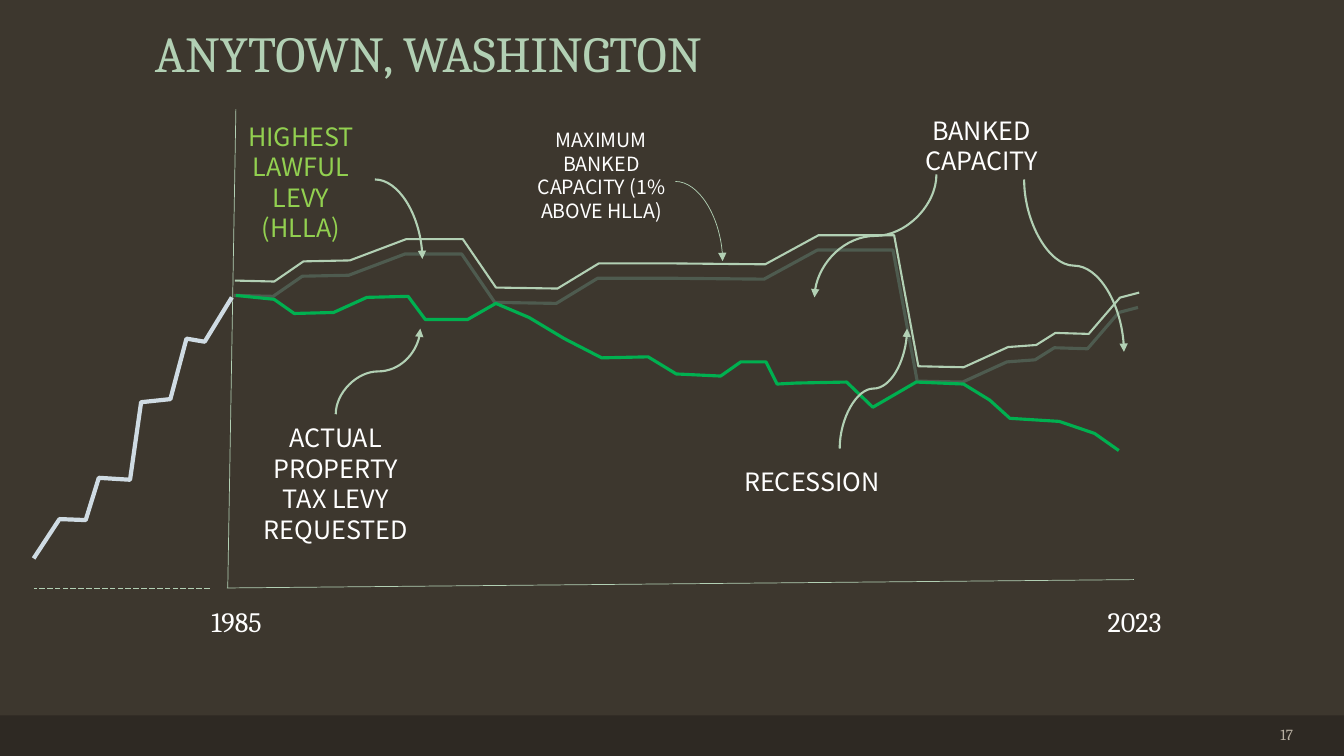
from lxml.etree import SubElement
from pptx import Presentation
from pptx.dml.color import RGBColor
from pptx.enum.dml import MSO_LINE
from pptx.enum.shapes import MSO_CONNECTOR, MSO_SHAPE
from pptx.enum.text import MSO_ANCHOR, PP_ALIGN
from pptx.oxml.ns import qn
from pptx.util import Pt

SAGE, WHITE = "B2D0B4", "FFFFFF"
SERIF, SANS = "Cambria", "Noto Sans CJK SC"

LAWFUL = [
    (143, 133), (171.1, 133.7), (192, 119.3), (225.1, 118.6), (265.4, 103.4),
    (305.8, 103.4), (329.5, 138), (373.4, 138.7), (403, 120.7), (451.2, 120.7),
    (521.8, 121.4), (559.9, 100.6), (613.9, 100.6), (631.2, 194.2),
    (663.6, 194.9), (695.3, 180.5), (715.4, 179), (729.1, 170.4),
    (752.9, 171.1), (775.2, 145.2), (788.9, 141.6)]
PAST = [
    (0, 320.9), (18.5, 292.8), (37.2, 293.5), (46.6, 263.3), (68.9, 264.7),
    (76.8, 209.3), (97.7, 207.1), (109.2, 163.9), (122.2, 166.1), (141.6, 134.4)]
ACTUAL = [
    (144.5, 133), (171.8, 135.8), (186.2, 145.9), (214.3, 145.2), (238.1, 134.4),
    (267.6, 133.7), (279.8, 150.2), (310.1, 150.2), (330.2, 138.7), (354, 148.8),
    (379.2, 163.9), (405.8, 177.6), (439, 176.9), (459.1, 189.1), (490.8, 190.6),
    (505.2, 180.5), (523.2, 180.5), (531.1, 196.3), (544.8, 195.6),
    (580.8, 194.9), (599.5, 212.9), (630.5, 194.9), (664.3, 196.3),
    (683, 207.8), (697.4, 220.8), (732.7, 223), (757.9, 231.6), (775.2, 243.8)]
MAXIMUM = [(x + 0.8, y - 10.6) for x, y in LAWFUL]


def color(code):
    """Turn a hex string into a colour."""
    return RGBColor.from_string(code)


def write(shape, text, size=18, font=SANS, ink=WHITE, align=PP_ALIGN.CENTER,
          anchor=MSO_ANCHOR.TOP, wrap=True, lead=None, top=3.6):
    """Fill a shape with one formatted paragraph."""
    frame = shape.text_frame
    frame.word_wrap, frame.vertical_anchor = wrap, anchor
    frame.margin_left = frame.margin_right = Pt(6.5)
    frame.margin_top, frame.margin_bottom = Pt(top), Pt(3.6)
    para = frame.paragraphs[0]
    para.alignment = align
    if lead:
        para.line_spacing = Pt(lead)
    run = para.add_run()
    run.text = text
    run.font.size, run.font.name = Pt(size), font
    run.font.color.rgb = color(ink)


def label(slide, x, y, w, h, text, **look):
    """Add a text box."""
    write(slide.shapes.add_textbox(Pt(x), Pt(y), Pt(w), Pt(h)), text, **look)


def link(slide, start, end, kind=MSO_CONNECTOR.STRAIGHT, width=0.5):
    """Add a sage connector without a shadow."""
    wire = slide.shapes.add_connector(kind, *map(Pt, (*start, *end)))
    wire.line.color.rgb, wire.line.width = color(SAGE), Pt(width)
    SubElement(wire._element.spPr, qn("a:effectLst"))
    return wire


def arrow(slide, start, end, turn=0, flip="", width=1.5):
    """Add a curved arrow, a quarter bend or a turned S."""
    (ax, ay), (bx, by) = start, end
    if turn:
        mx, my = (ax + bx) / 2, (ay + by) / 2
        dx, dy = abs(by - ay) / 2, abs(bx - ax) / 2
        dx, dy = -dx if "h" in flip else dx, -dy if "v" in flip else dy
        start, end = (mx - dx, my - dy), (mx + dx, my + dy)
    wire = link(slide, start, end, MSO_CONNECTOR.CURVE, width)
    props = wire._element.spPr
    if turn:
        props.find(qn("a:xfrm")).set("rot", str(turn * 60000))
    else:
        props.find(qn("a:prstGeom")).set("prst", "curvedConnector2")
    SubElement(props.find(qn("a:ln")), qn("a:tailEnd"), type="triangle")


def trace(slide, points, ink, width):
    """Draw an open line through points."""
    first, *rest = [(Pt(x), Pt(y)) for x, y in points]
    pen = slide.shapes.build_freeform(*first)
    pen.add_line_segments(rest, close=False)
    path = pen.convert_to_shape()
    path.shadow.inherit = False
    path.fill.background()
    path.line.color.rgb, path.line.width = color(ink), Pt(width)


def head(slide, x, y, w, h):
    """Place the title."""
    title = slide.shapes.title
    title.left, title.top, title.width, title.height = map(Pt, (x, y, w, h))
    write(title, "ANYTOWN, WASHINGTON", size=36, font=SERIF, ink=SAGE, wrap=False)


def foot(slide, x, y, w, h):
    """Draw the bottom band and page number."""
    band = slide.shapes.add_shape(MSO_SHAPE.RECTANGLE, *map(Pt, (x, y, w, h)))
    band.shadow.inherit = False
    band.fill.solid()
    band.fill.fore_color.rgb = color("2E2923")
    band.line.fill.background()
    label(slide, x + w - 65.8, y + 4.5, 36, 18, "17", size=11, font=SERIF,
          ink="BAB1A3", align=PP_ALIGN.RIGHT, anchor=MSO_ANCHOR.MIDDLE)


def plot(slide, x, y, w, h):
    """Draw the axes, years and levy lines."""
    link(slide, (x + 144.5, y), (x + 138.7, y + h))
    link(slide, (x + 138, y + h), (x + w - 3, y + h - 6))
    past = link(slide, (x + 125.8, y + h), (x, y + h))
    past.line.dash_style = MSO_LINE.LONG_DASH
    for year, left in (("1985", 115), ("2023", 756.5)):
        label(slide, x + left, y + h + 8, 60, 32, year, size=20, font=SERIF, wrap=False)
    for points, ink, width in ((LAWFUL, "4E5B4F", 2.25), (PAST, "CFDBE3", 3),
                               (ACTUAL, "00B050", 2.25), (MAXIMUM, SAGE, 1.5)):
        trace(slide, [(x + px, y + py) for px, py in points], ink, width)


def notes(slide, x, y):
    """Add the labels and curved arrows over the plot."""
    for text, left, top, wide, tall, size, ink in (
            ("HIGHEST LAWFUL LEVY (HLLA)", 138, 2.6, 106, 94, 18, "92D050"),
            ("BANKED CAPACITY", 624, -1.7, 106, 51, 18, WHITE),
            ("RECESSION", 495, 249.6, 122, 29, 18, WHITE),
            ("ACTUAL PROPERTY TAX LEVY REQUESTED", 148.8, 217.9, 134, 94, 18, WHITE),
            ("MAXIMUM BANKED CAPACITY (1% ABOVE HLLA)", 352.6, 7.7, 106, 75, 14, WHITE)):
        label(slide, x + left, y + top, wide, tall, text, size=size, ink=ink,
              lead=round(size * 1.21, 1), top=5.6)
    for ax, ay, bx, by, turn, flip, width in (
            (243.8, 50.2, 277.7, 107, 0, "", 1.5),
            (458.4, 51.6, 492.2, 108.5, 0, "", 0.5),
            (707.5, 50.2, 778.8, 173.3, 270, "h", 1.5),
            (644.9, 46.6, 557.8, 134.4, 90, "", 1.5),
            (575.8, 242.4, 624, 156.7, 90, "hv", 1.5),
            (215.8, 217.9, 276.2, 156.7, 90, "hv", 1.5)):
        arrow(slide, (x + ax, y + ay), (x + bx, y + by), turn, flip, width)


def main():
    """Build and save the slide."""
    deck = Presentation()
    deck.slide_width, deck.slide_height = Pt(960), Pt(540)
    slide = deck.slides.add_slide(deck.slide_layouts[5])
    slide.background.fill.solid()
    slide.background.fill.fore_color.rgb = color("3D372E")
    foot(slide, 0, 511, 960, 29)
    head(slide, 54, 12.2, 504, 51)
    plot(slide, 24, 78, 789, 342)
    notes(slide, 24, 78)
    deck.save("out.pptx")


if __name__ == "__main__":
    main()
